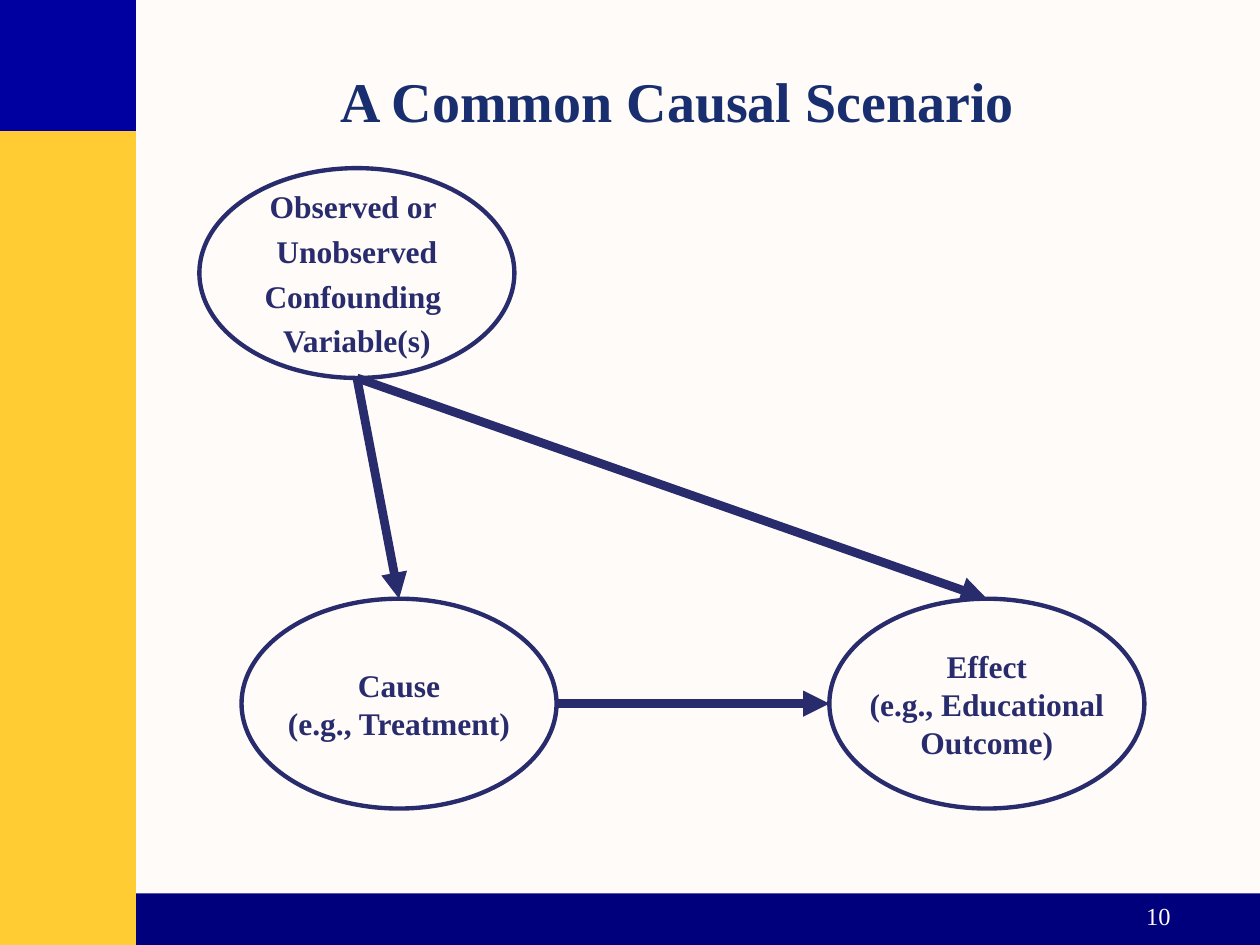
import pptx
import pptx.util
import pptx.dml.color
import pptx.enum.dml
import pptx.enum.shapes
import pptx.enum.text
import pptx.oxml
import pptx.oxml.ns

Cm = pptx.util.Cm
Pt = pptx.util.Pt
Align = pptx.enum.text.PP_ALIGN
Shape = pptx.enum.shapes.MSO_SHAPE

THEME = {
    "font": "Times New Roman",
    "paper": "FFFBF8", "ink": "282C6D", "title": "182E6F",
    "footer": "00007D", "side": "FFCC33", "corner": "0000A0",
    "title_size": 32, "node_size": 18, "number_size": 14,
    "outline": 2.5, "arrow": 5,
}

# Centimetres: left, top, width, height
BANDS = [
    ("footer", (2.26, 18.01, 23.14, 1.04)),
    ("side", (0, 2.54, 2.74, 16.51)),
    ("corner", (0, 0, 2.74, 2.64)),
]
TITLE = ("A Common Causal Scenario ", (2.74, 0.43, 22.12, 3.18))
PAGE_NUMBER = ("10", (18.57, 18.03, 5.28, 1.27))

NODE_WIDTH, NODE_HEIGHT = 6.35, 4.23
# Name: left, top, space between lines in points, lines
NODES = {
    "confounder": (4.02, 3.39, 4, ["Observed or ", "Unobserved", "Confounding ", "Variable(s)"]),
    "cause": (4.87, 12.07, 0, ["Cause", "(e.g., Treatment)"]),
    "effect": (16.72, 12.07, 0, ["Effect", "(e.g., Educational", "Outcome)"]),
}
ARROWS = [
    (("confounder", "bottom"), ("cause", "top")),
    (("confounder", "bottom"), ("effect", "top")),
    (("cause", "right"), ("effect", "left")),
]
# Fractions of a node's width and height
SIDES = {"top": (0.5, 0), "bottom": (0.5, 1), "left": (0, 0.5), "right": (1, 0.5)}


def color(name):
    return pptx.dml.color.RGBColor.from_string(THEME[name])


def write(box, lines, size, ink, bold=False, align=Align.CENTER, gap=0, wrap=True,
          anchor=pptx.enum.text.MSO_ANCHOR.MIDDLE):
    frame = box.text_frame
    frame.word_wrap = wrap
    frame.vertical_anchor = anchor
    for index, line in enumerate(lines):
        para = frame.paragraphs[0] if index == 0 else frame.add_paragraph()
        para.alignment = align
        para.space_before = Pt(gap if index else 0)
        span = para.add_run()
        span.text = line
        span.font.name = THEME["font"]
        span.font.size = Pt(THEME[size])
        span.font.bold = bold
        span.font.color.rgb = color(ink)


def add_filled(page, kind, place, fill):
    shape = page.shapes.add_shape(kind, *map(Cm, place))
    shape.shadow.inherit = False
    shape.fill.solid()
    shape.fill.fore_color.rgb = color(fill)
    shape.line.fill.background()
    return shape


def add_node(page, left, top, gap, lines):
    node = add_filled(page, Shape.OVAL, (left, top, NODE_WIDTH, NODE_HEIGHT), "paper")
    node.line.color.rgb = color("ink")
    node.line.width = Pt(THEME["outline"])
    write(node, lines, "node_size", "ink", bold=True, gap=gap, wrap=False)


def side_point(name, side):
    left, top = NODES[name][:2]
    across, down = SIDES[side]
    return Cm(left + across * NODE_WIDTH), Cm(top + down * NODE_HEIGHT)


def add_arrow(page, start, end):
    arrow = page.shapes.add_connector(
        pptx.enum.shapes.MSO_CONNECTOR.STRAIGHT, *side_point(*start), *side_point(*end))
    arrow.line.color.rgb = color("ink")
    arrow.line.width = Pt(THEME["arrow"])
    properties = arrow.line._get_or_add_ln()
    head = pptx.oxml.parse_xml(
        f'<a:tailEnd {pptx.oxml.ns.nsdecls("a")} type="triangle"/>')
    properties.append(head)
    properties.addnext(pptx.oxml.parse_xml(
        f'<a:effectLst {pptx.oxml.ns.nsdecls("a")}/>'))


def main():
    deck = pptx.Presentation()
    deck.slide_width, deck.slide_height = Cm(25.4), Cm(19.05)
    page = deck.slides.add_slide(deck.slide_layouts.get_by_name("Title Only"))
    page.background.fill.solid()
    page.background.fill.fore_color.rgb = color("paper")

    for fill, place in BANDS:
        add_filled(page, Shape.RECTANGLE, place, fill)

    text, place = TITLE
    title = page.shapes.title
    title.left, title.top, title.width, title.height = map(Cm, place)
    write(title, [text], "title_size", "title", bold=True)

    text, place = PAGE_NUMBER
    number = page.shapes.add_textbox(*map(Cm, place))
    write(number, [text], "number_size", "paper", align=Align.RIGHT,
          anchor=pptx.enum.text.MSO_ANCHOR.TOP)

    for node in NODES.values():
        add_node(page, *node)
    for start, end in ARROWS:
        add_arrow(page, start, end)

    deck.save("out.pptx")


if __name__ == "__main__":
    main()
